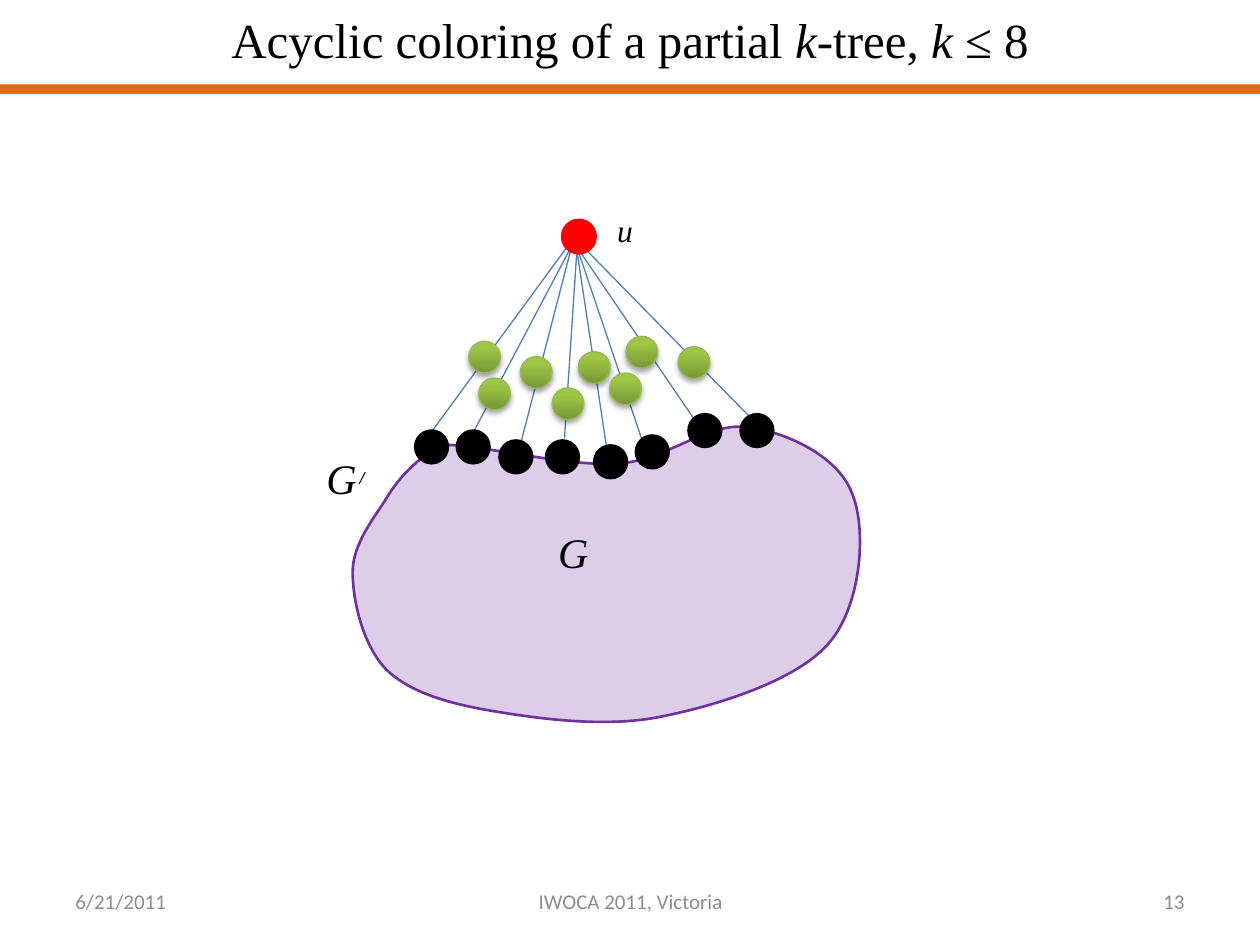
from dataclasses import dataclass

from lxml import etree
from pptx import Presentation
from pptx.dml.color import RGBColor
from pptx.enum.shapes import MSO_CONNECTOR, MSO_SHAPE
from pptx.enum.text import MSO_ANCHOR, PP_ALIGN
from pptx.oxml.ns import qn
from pptx.util import Cm, Pt

STRAIGHT = MSO_CONNECTOR.STRAIGHT
OVAL, RECTANGLE = MSO_SHAPE.OVAL, MSO_SHAPE.RECTANGLE
LEFT, CENTER, RIGHT = PP_ALIGN.LEFT, PP_ALIGN.CENTER, PP_ALIGN.RIGHT
TOP, MIDDLE = MSO_ANCHOR.TOP, MSO_ANCHOR.MIDDLE


@dataclass(frozen=True)
class Theme:
    math_font: str = "Times New Roman"
    footer_font: str = "Calibri"
    title_size: int = 28
    graph_size: int = 24
    vertex_size: int = 18
    footer_size: int = 12
    ink: RGBColor = RGBColor(0, 0, 0)
    footer: RGBColor = RGBColor(0x8C, 0x8C, 0x8C)
    bar: RGBColor = RGBColor(0xE4, 0x6C, 0x0A)
    edge: RGBColor = RGBColor(0x4B, 0x7E, 0xBC)
    region: RGBColor = RGBColor(0x70, 0x30, 0xA0)
    apex: RGBColor = RGBColor(0xFF, 0, 0)
    green_line: RGBColor = RGBColor(0x98, 0xB9, 0x55)
    green_dark: RGBColor = RGBColor(0x77, 0x97, 0x37)
    green_light: RGBColor = RGBColor(0x9D, 0xC7, 0x46)


theme = Theme()
prs = Presentation()
prs.slide_width, prs.slide_height = Cm(25.4), Cm(19.05)
slide = prs.slides.add_slide(prs.slide_layouts[6])
shapes = slide.shapes


def add_label(box, pieces, size, font=theme.math_font, color=theme.ink,
              align=CENTER, anchor=MIDDLE):
    """Add one line of text from (text, italic) pieces and return its runs."""
    frame = shapes.add_textbox(*map(Cm, box)).text_frame
    frame.word_wrap = True
    frame.vertical_anchor = anchor
    paragraph = frame.paragraphs[0]
    paragraph.alignment = align
    for text, italic in pieces:
        run = paragraph.add_run()
        run.text = text
        run.font.name, run.font.size = font, Pt(size)
        run.font.italic = italic
        run.font.color.rgb = color
    return paragraph.runs


def add_vertex(left, top, color, line_width):
    vertex = shapes.add_shape(OVAL, Cm(left), Cm(top), Cm(0.64), Cm(0.64))
    vertex.shadow.inherit = False
    vertex.fill.solid()
    vertex.fill.fore_color.rgb = color
    vertex.line.color.rgb = color
    vertex.line.width = Pt(line_width)
    return vertex


# Edges from u: single lines, and pairs that meet at u
for start, end in [((8.71, 8.69), (11.43, 4.98)), ((11.81, 5.03), (15.14, 8.43))]:
    edge = shapes.add_connector(STRAIGHT, *map(Cm, start + end))
    edge.line.color.rgb = theme.edge
    edge.line.width = Pt(0.75)
    etree.SubElement(edge._element.spPr, qn("a:effectLst"))

edge_pairs = [
    [(9.53, 8.74), (11.53, 4.95), (10.49, 8.97)],
    [(11.38, 8.84), (11.63, 5.05), (12.24, 9.09)],
    [(12.95, 8.89), (11.63, 4.98), (14, 8.46)],
]
for first, meeting, last in edge_pairs:
    builder = shapes.build_freeform(Cm(first[0]), Cm(first[1]))
    builder.add_line_segments([(Cm(x), Cm(y)) for x, y in (meeting, last)], close=False)
    pair = builder.convert_to_shape()
    pair.shadow.inherit = False
    pair.fill.background()
    pair.line.color.rgb = theme.edge
    pair.line.width = Pt(0.75)

# Region G: each row holds two control points and the end of one Bézier curve
region_start = (8.48, 9.25)
region_curves = [
    [(8.28, 9.42), (8.03, 9.65), (7.8, 10.03)],
    [(7.57, 10.41), (7.11, 10.95), (7.11, 11.53)],
    [(7.11, 12.12), (7.32, 13.03), (7.8, 13.51)],
    [(8.28, 13.97), (9.09, 14.2), (10.03, 14.35)],
    [(10.95, 14.5), (12.29, 14.68), (13.41, 14.43)],
    [(14.53, 14.2), (16.13, 13.69), (16.74, 12.93)],
    [(17.37, 12.17), (17.48, 10.64), (17.17, 9.93)],
    [(16.89, 9.19), (15.82, 8.69), (15.04, 8.61)],
    [(14.25, 8.51), (13.41, 9.3), (12.42, 9.35)],
    [(11.4, 9.4), (9.68, 8.97), (9.02, 8.97)],
    [(8.36, 8.97), (8.69, 9.07), region_start],
]
builder = shapes.build_freeform(*map(Cm, region_start))
builder.add_line_segments([(Cm(x), Cm(y)) for curve in region_curves for x, y in curve])
region = builder.convert_to_shape()
region.shadow.inherit = False
region.fill.solid()
region.fill.fore_color.rgb = theme.region
region.line.color.rgb = theme.region
region.line.width = Pt(1.5)
fill_color = region._element.spPr.find(qn("a:solidFill"))[0]
etree.SubElement(fill_color, qn("a:alpha"), val="24000")

# Turn every three line segments into one cubic curve
segments = list(region._element.iter(qn("a:lnTo")))
for i in range(0, 3 * len(region_curves), 3):
    curve = etree.Element(qn("a:cubicBezTo"))
    segments[i].addprevious(curve)
    for segment in segments[i:i + 3]:
        curve.append(segment[0])
        segment.getparent().remove(segment)

add_label((12.19, 4.24, 0.58, 0.81), [("u", True)], theme.vertex_size)
add_label((0, 0, 25.4, 1.57),
          [("Acyclic coloring of a partial ", False), ("k", True), ("-tree, ", False),
           ("k ≤ ", True), ("8", False)], theme.title_size)
add_label((10.87, 10.59, 1.37, 1.07), [("G", True)], theme.graph_size)

# Neighbours of u on the boundary of G, then u itself
neighbours = [(8.38, 8.69), (9.22, 8.69), (10.08, 8.89), (11.02, 8.89),
              (11.99, 8.99), (12.83, 8.79), (13.89, 8.36), (14.94, 8.36)]
for left, top in neighbours:
    add_vertex(left, top, theme.ink, 2)
add_vertex(11.35, 4.45, theme.apex, 2.5)

# Division vertices, one on each edge
divisions = [(9.45, 6.88), (10.49, 7.19), (9.65, 7.62), (11.13, 7.82),
             (11.66, 7.09), (12.29, 7.52), (12.62, 6.78), (13.67, 6.99)]
for left, top in divisions:
    division = add_vertex(left, top, theme.green_line, 0.75)
    division.fill.gradient()
    division.fill.gradient_angle = 90
    dark, light = division.fill.gradient_stops
    dark.color.rgb, dark.position = theme.green_dark, 0
    light.color.rgb, light.position = theme.green_light, 0.8
    effects = division._element.spPr.find(qn("a:effectLst"))
    shadow = etree.SubElement(effects, qn("a:outerShdw"), blurRad=str(Pt(3.1)),
                              dist=str(Pt(1.8)), dir="5400000", rotWithShape="0")
    shadow_color = etree.SubElement(shadow, qn("a:srgbClr"), val=str(theme.ink))
    etree.SubElement(shadow_color, qn("a:alpha"), val="35000")

bar = shapes.add_shape(RECTANGLE, Cm(0), Cm(1.7), Cm(25.4), Cm(0.2))
bar.shadow.inherit = False
bar.fill.solid()
bar.fill.fore_color.rgb = theme.bar
bar.line.fill.background()

# G with its prime mark
add_label((5.92, 9.09, 1.93, 1.07), [("G", True)], theme.graph_size)
prime = add_label((6.98, 9.19, 0.64, 0.76), [("/", True)], theme.vertex_size, anchor=TOP)[0]
prime.font.bold = True
prime._r.get_or_add_rPr().set("baseline", "30000")

footers = [
    (1.27, 5.92, "6/21/2011", LEFT),
    (18.21, 5.92, "13", RIGHT),
    (8.69, 8.05, "IWOCA 2011, Victoria", CENTER),
]
for left, width, text, align in footers:
    add_label((left, 17.65, width, 1.02), [(text, False)], theme.footer_size,
              theme.footer_font, theme.footer, align)

prs.save("out.pptx")
